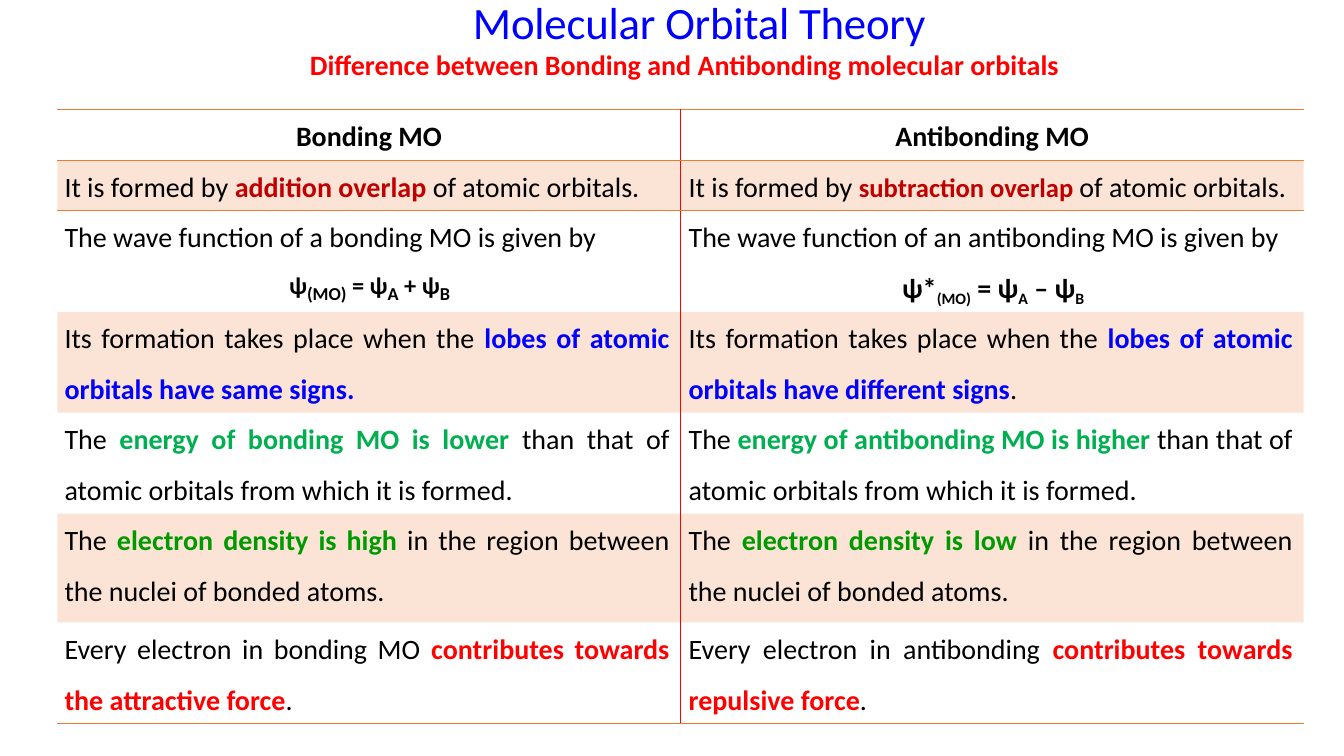
from lxml import etree
from pptx import Presentation
from pptx.dml.color import RGBColor
from pptx.enum.text import MSO_ANCHOR, MSO_AUTO_SIZE, PP_ALIGN
from pptx.oxml.ns import qn
from pptx.util import Inches, Pt

# Content
BLACK, BLUE, RED, DARK_RED = "000000", "0000FF", "FF0000", "C00000"
GREEN, DARK_GREEN, ORANGE = "00AF50", "009900", "EC7C30"

TITLE = [  # text, size, colour, bold, line height, space before, indent, letter spacing
    ("Molecular Orbital Theory", 32, BLUE, False, 37.5, 1.1, 0.29, -0.18),
    ("Difference between Bonding and Antibonding molecular orbitals",
     20, RED, True, 23.1, 0, 0, -0.01),
]
HEADERS = ["Bonding MO", "Antibonding MO"]
# Each cell is a list of lines; each line holds plain text or (text, colour[, size])
ROWS = [
    ([["It is formed by ", ("addition overlap ", DARK_RED), "of atomic orbitals."]],
     [["It is formed by ", ("subtraction overlap ", DARK_RED, 19), "of atomic orbitals."]]),
    ([["The wave function of a bonding MO is given by"]],
     [["The wave function of an antibonding MO is given by"]]),
    ([["Its formation takes place when the ", ("lobes of atomic", BLUE)],
      [("orbitals have same signs.", BLUE)]],
     [["Its formation takes place when the ", ("lobes of atomic", BLUE)],
      [("orbitals have different signs", BLUE), "."]]),
    ([["The ", ("energy of bonding MO is lower ", GREEN), "than that of"],
      ["atomic orbitals from which it is formed."]],
     [["The ", ("energy of antibonding MO is higher ", GREEN), "than that of"],
      ["atomic orbitals from which it is formed."]]),
    ([["The ", ("electron density is high ", DARK_GREEN), "in the region between"],
      ["the nuclei of bonded atoms."]],
     [["The ", ("electron density is low ", DARK_GREEN), "in the region between"],
      ["the nuclei of bonded atoms."]]),
    ([["Every electron in bonding MO ", ("contributes towards", RED)],
      [("the attractive force", RED), "."]],
     [["Every electron in antibonding ", ("contributes towards", RED)],
      [("repulsive force", RED), "."]]),
]
# Wave functions alternate symbols and subscripts; each style is (size, baseline %)
FORMULA_ROW = 2
FORMULAS = [
    (["ψ", "(MO)", " = ψ", "A", " + ψ", "B"], (30, 14), (13, 0), 17.5, 23.1),
    (["ψ*", "(MO)", " = ψ", "A", " – ψ", "B"], (20, 0), (19.5, -21), 12, None),
]
COL_WIDTHS = [6.18, 6.18]
ROW_HEIGHTS = [0.5, 0.5, 1, 1, 1, 1.08, 1]
INDENTS = [0.07, 0.08]
RULES = {0, 1, 2, len(ROW_HEIGHTS)}  # row edges that carry an orange rule


def rgb(color):
    return RGBColor.from_string(color)


def add_run(p, text, size=20, color=BLACK, bold=False):
    r = p.add_run()
    r.text = text
    r.font.name = "Calibri"
    r.font.size = Pt(size)
    r.font.bold = bold
    r.font.color.rgb = rgb(color)
    return r


def add_border(cell, side, color, width):
    ln = etree.SubElement(cell._tc.get_or_add_tcPr(), qn("a:ln" + side),
                          w=str(int(Pt(width))))
    if color is None:
        etree.SubElement(ln, qn("a:noFill"))
        return
    fill = etree.SubElement(ln, qn("a:solidFill"))
    etree.SubElement(fill, qn("a:srgbClr"), val=color)
    etree.SubElement(ln, qn("a:prstDash"), val="solid")


def fill_lines(tf, lines):
    for i, line in enumerate(lines):
        p = tf.add_paragraph() if i else tf.paragraphs[0]
        if i:
            p.space_before = Pt(10.8)
        for part in line:
            if isinstance(part, str):
                add_run(p, part)
            else:
                add_run(p, part[0], part[2] if len(part) > 2 else 20, part[1], True)
        # A closing break lets the line stretch to the full width
        if i < len(lines) - 1:
            p.alignment = PP_ALIGN.JUSTIFY
            p.add_line_break()
            br = p._p.findall(qn("a:br"))[-1]
            etree.SubElement(br, qn("a:rPr"), sz="100")
            etree.SubElement(p._p, qn("a:endParaRPr"), sz="100")


def add_formula(tf, parts, symbol, subscript, before, height):
    p = tf.add_paragraph()
    p.alignment = PP_ALIGN.CENTER
    p.space_before = Pt(before)
    if height:
        p.line_spacing = Pt(height)
    for i, part in enumerate(parts):
        size, baseline = subscript if i % 2 else symbol
        r = add_run(p, part, size, bold=True)
        if baseline:
            r.font._element.set("baseline", str(baseline * 1000))


prs = Presentation()
prs.slide_width, prs.slide_height = Inches(13.33), Inches(7.5)
s = prs.slides.add_slide(prs.slide_layouts[5])

# Title and subtitle
title = s.shapes.title
title.left, title.top = Inches(3.06), Inches(-0.05)
title.width, title.height = Inches(7.46), Inches(0.87)
tf = title.text_frame
tf.margin_left = tf.margin_right = tf.margin_bottom = 0
tf.margin_top = Inches(0.01)
tf.vertical_anchor = MSO_ANCHOR.TOP
tf.auto_size = MSO_AUTO_SIZE.NONE
tf.word_wrap = True
for i, (text, size, color, bold, height, before, indent, spacing) in enumerate(TITLE):
    p = tf.add_paragraph() if i else tf.paragraphs[0]
    p.alignment = PP_ALIGN.CENTER
    p.line_spacing, p.space_before = Pt(height), Pt(before)
    p._p.get_or_add_pPr().set("marL", str(int(Inches(indent))))
    r = add_run(p, text, size, color, bold)
    r.font._element.set("spc", str(round(spacing * 100)))

# Comparison table
frame = s.shapes.add_table(len(ROW_HEIGHTS), len(COL_WIDTHS), Inches(0.57), Inches(1.09),
                           Inches(sum(COL_WIDTHS)), Inches(sum(ROW_HEIGHTS)))
table = frame.table
table.first_row = table.horz_banding = False
tbl_pr = table._tbl.tblPr
tbl_pr.remove(tbl_pr.find(qn("a:tableStyleId")))
for column, width in zip(table.columns, COL_WIDTHS):
    column.width = Inches(width)
for row, height in zip(table.rows, ROW_HEIGHTS):
    row.height = Inches(height)

for r_i in range(len(ROW_HEIGHTS)):
    for c_i in range(len(COL_WIDTHS)):
        cell = table.cell(r_i, c_i)
        cell.margin_top, cell.margin_bottom = Inches(0.1), 0
        cell.margin_left = Inches(INDENTS[c_i]) if r_i else 0
        cell.margin_right = Inches(0.11) if r_i > FORMULA_ROW else 0
        if r_i == FORMULA_ROW:
            cell.margin_right = Inches(0.06)

        # Red divider between the columns, orange rules across
        add_border(cell, "L", RED if c_i else None, 1.5)
        add_border(cell, "R", None if c_i else RED, 1.5)
        add_border(cell, "T", ORANGE if r_i in RULES else None, 1)
        add_border(cell, "B", ORANGE if r_i + 1 in RULES else None, 1)

        # Tinted bands on every second row
        if r_i % 2:
            cell.fill.solid()
            cell.fill.fore_color.rgb = rgb(ORANGE)
            tint = cell._tc.tcPr.find(qn("a:solidFill")).find(qn("a:srgbClr"))
            etree.SubElement(tint, qn("a:alpha"), val="20000")
        else:
            cell.fill.background()

        if r_i == 0:
            p = cell.text_frame.paragraphs[0]
            p.alignment = PP_ALIGN.CENTER
            add_run(p, HEADERS[c_i], bold=True)
        else:
            fill_lines(cell.text_frame, ROWS[r_i - 1][c_i])
        if r_i == FORMULA_ROW:
            add_formula(cell.text_frame, *FORMULAS[c_i])

prs.save("out.pptx")
